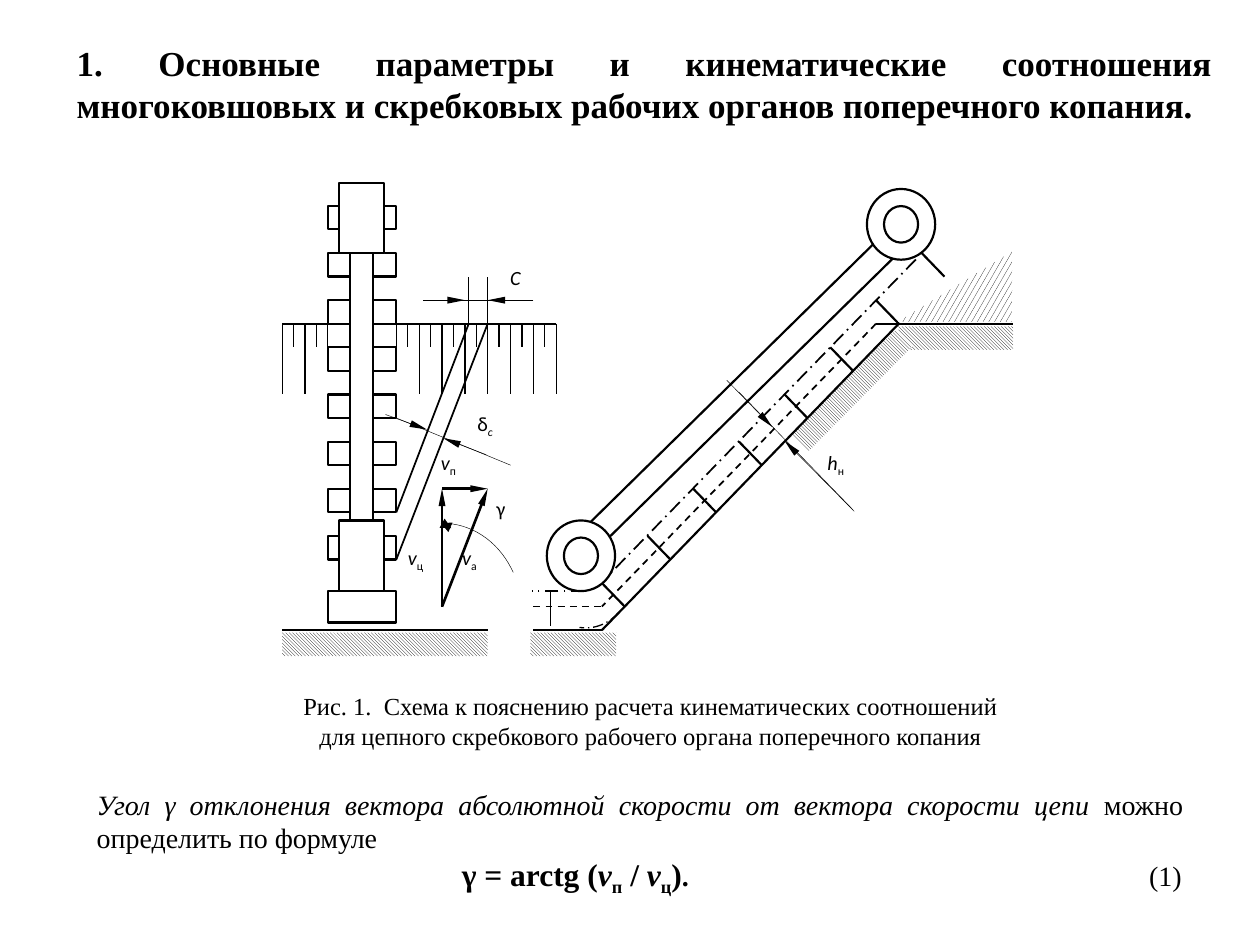
"""Builds the slide on the kinematics of a cross-digging scraper chain."""
from lxml.etree import SubElement
from pptx import Presentation
from pptx.dml.color import RGBColor
from pptx.enum.dml import MSO_LINE, MSO_PATTERN
from pptx.enum.shapes import MSO_CONNECTOR, MSO_SHAPE
from pptx.enum.text import MSO_ANCHOR, MSO_AUTO_SIZE, PP_ALIGN
from pptx.oxml.ns import qn
from pptx.util import Pt

BLACK = RGBColor(0, 0, 0)
WHITE = RGBColor(255, 255, 255)
SERIF, SANS = "Times New Roman", "Calibri"
X0, Y0, DX, DY = 161.25, 185, 13.05, 13.47
DASH, DASH_DOT = MSO_LINE.DASH, MSO_LINE.LONG_DASH_DOT
HATCH, CONFETTI = MSO_PATTERN.LIGHT_DOWNWARD_DIAGONAL, MSO_PATTERN.LARGE_CONFETTI

prs = Presentation()
prs.slide_width, prs.slide_height = Pt(720), Pt(540)
s = prs.slides.add_slide(prs.slide_layouts[5])


def add_line(c1, r1, c2, r2, width, dash=None, arrow=False):
    """Draws a line between two points of the drawing grid."""
    cn = s.shapes.add_connector(MSO_CONNECTOR.STRAIGHT, Pt(X0 + DX * c1), Pt(Y0 + DY * r1),
                                Pt(X0 + DX * c2), Pt(Y0 + DY * r2))
    cn.line.color.rgb = BLACK
    cn.line.width = Pt(width)
    if dash:
        cn.line.dash_style = dash
    if arrow:
        SubElement(cn.line._get_or_add_ln(), qn("a:tailEnd"), type="triangle", w="sm", len="lg")
    SubElement(cn._element.spPr, qn("a:effectLst"))


def add_runs(p, runs, font, size, bold=False):
    """Adds runs given as text and style, where i is italic and s is subscript."""
    for text, style in runs:
        r = p.add_run()
        r.text = text
        r.font.name, r.font.size = font, Pt(size)
        r.font.color.rgb = BLACK
        r.font.bold, r.font.italic = bold, "i" in style
        if "s" in style:
            r._r.get_or_add_rPr().set("baseline", "-25000")


title = s.shapes.title
title.left, title.top, title.width, title.height = Pt(40.3), Pt(385.2), Pt(663), Pt(53.3)
tf = title.text_frame
tf.text = ("Рис. 1.  Схема к пояснению расчета кинематических соотношений\v"
           "для цепного скребкового рабочего органа поперечного копания")
tf.auto_size = MSO_AUTO_SIZE.NONE
tf.vertical_anchor = MSO_ANCHOR.MIDDLE
p = tf.paragraphs[0]
p.alignment = PP_ALIGN.CENTER
for r in p.runs:
    r.font.name, r.font.size = SERIF, Pt(14)
    r.font.color.rgb = BLACK

tf = s.shapes.add_textbox(Pt(36.7), Pt(20.2), Pt(663), Pt(80)).text_frame
tf.word_wrap = True
tf.paragraphs[0].alignment = PP_ALIGN.JUSTIFY
add_runs(tf.paragraphs[0], [("1. Основные параметры и кинематические соотношения многоковшовых "
                             "и скребковых рабочих органов поперечного копания.", "")],
         SERIF, 20, True)

RECT, DONUT = MSO_SHAPE.RECTANGLE, MSO_SHAPE.DONUT
scrapers = [(RECT, X0 + 2 * DX, Y0 + DY * row, 3 * DX, DY, 0, WHITE) for row in range(-5, 10, 2)]
base = [(RECT, X0 + 2 * DX, 337.7, 3 * DX, 18, 0, WHITE)]
boom = [(RECT, 307.4, 215.3, 234.7, 13.7, 315.5, None)]
wheels = [(DONUT, x, y, 39, 40.4, 0, WHITE) for x, y in ((312.5, 297.4), (495.4, 108))]
shaft = [(RECT, 200.2, 131, 13, 201.6, 0, WHITE)]
drums = [(RECT, 193.7, y, 26, 40.4, 0, WHITE) for y in (104.4, 297.4)]
spoil = [(MSO_SHAPE.RIGHT_TRIANGLE, 525.6, 131, 40.3, 65.5, 270, CONFETTI)]
soil = [(RECT, x, y, w, DY, rot, HATCH) for x, y, w, rot in (
    (X0, 361.5, 117.4, 0), (303.1, 361.5, 49, 0), (513.4, 186.5, 65.5, 0),
    (444.2, 216.7, 85, 314.7))]

add_line(0, 0, 12, 0, 1.25)
add_line(27.75, -2.73, 13.74, 11.22, 1, DASH_DOT)
for k in range(8):
    add_line(28 - 2 * k, 2 * k - 3, 29 - 2 * k, 2 * k - 2, 1.25)

for kind, x, y, w, h, rot, fill in scrapers + base + boom + wheels + shaft + drums + spoil + soil:
    sp = s.shapes.add_shape(kind, Pt(x), Pt(y), Pt(w), Pt(h))
    sp.rotation = rot
    sp.shadow.inherit = False
    sp.line.color.rgb = BLACK
    sp.line.width = Pt(1.25)
    if fill is None:
        sp.fill.background()
    elif fill == WHITE:
        sp.fill.solid()
        sp.fill.fore_color.rgb = WHITE
    else:
        sp.fill.patterned()
        sp.fill.pattern = fill
        sp.fill.fore_color.rgb, sp.fill.back_color.rgb = BLACK, WHITE
        sp.line.fill.background()

for col in (0, 1, 6, 7, 8, 9, 10, 11, 12):
    add_line(col, 0, col, 3, 0.75)
for col in (0.5, 1.5, 2, 5, 5.5, 6.5, 7.5, 8.5, 9.5, 10.5, 11.5):
    add_line(col, 0, col, 1, 0.75)

for args in (
    (27, 0, 14, 13, 1.25), (26, 0, 32, 0, 1.25), (14, 13, 11, 13, 1.25), (0, 13, 9, 13, 1.25),
    (26, 0, 14, 12, 1, DASH), (11, 12, 14, 12, 1, DASH),
    (13.24, 11.33, 10.92, 11.33, 1, DASH_DOT), (11.75, 11.38, 11.75, 12.83, 1),
    (5, 10, 9, 0, 1), (5, 8, 8.17, 0, 1), (8.17, 0, 8.17, -2, 0.5), (9, 0, 9, -2, 0.5),
    (5, 4, 10, 6, 0.25), (7, -1, 11, -1, 0.25), (20, 2.9, 25, 7.9, 0.25),
):
    add_line(*args)

for c1, r1, c2, r2, width in (
    (8.94, 5.56, 7.06, 4.86, 0.25), (4.52, 3.85, 6.34, 4.49, 0.25),
    (6.18, -1, 8, -1, 0.25), (11, -1, 9, -1, 0.25),
    (19.47, 2.4, 21.46, 4.38, 0.25), (25.05, 7.96, 22, 4.97, 0.25),
    (7, 12, 7, 7, 1.5), (7, 7, 9, 7, 1.5), (7, 12, 9, 7, 1.5),
):
    add_line(c1, r1, c2, r2, width, arrow=True)

for cx, cy, rx, ry, start, end, width, dash, heads in (
    (334.8, 320.8, 29.5, 38, 57.6, 95.5, 0.75, DASH_DOT, ()),
    (252.7, 350, 45.4, 51, 270, 330.6, 0.25, None, ()),
    (252, 350, 18, 51, 270, 277, 0.25, None, ("a:headEnd", "a:tailEnd")),
):
    sp = s.shapes.add_shape(MSO_SHAPE.ARC, Pt(cx - rx), Pt(cy - ry), Pt(2 * rx), Pt(2 * ry))
    sp.adjustments[0], sp.adjustments[1] = start * 0.6, end * 0.6
    sp.shadow.inherit = False
    sp.fill.background()
    sp.line.color.rgb = BLACK
    sp.line.width = Pt(width)
    if dash:
        sp.line.dash_style = dash
    for head in heads:
        SubElement(sp.line._get_or_add_ln(), qn(head), type="triangle")

for x, y, w, runs in (
    (284.4, 146.2, 30, [("С", "i")]),
    (465.8, 251.3, 44, [("h", "i"), ("н", "s")]),
    (265.7, 229, 39, [("δ", ""), ("с", "is")]),
    (226, 306, 42.5, [("v", "i"), ("ц", "s")]),
    (257, 306, 39.6, [("v", "i"), ("а", "s")]),
    (244.8, 251.3, 39.6, [("v", "i"), ("п", "s")]),
    (276.5, 278, 26, [("γ", "")]),
):
    tf = s.shapes.add_textbox(Pt(x), Pt(y), Pt(w), Pt(40)).text_frame
    tf.word_wrap = True
    p = tf.paragraphs[0]
    p.line_spacing, p.space_after = 1.15, Pt(10)
    add_runs(p, runs, SANS, 11.5)

tf = s.shapes.add_textbox(Pt(48.2), Pt(446.4), Pt(635), Pt(67.7)).text_frame
tf.word_wrap = True
p = tf.paragraphs[0]
p.alignment = PP_ALIGN.JUSTIFY
add_runs(p, [("Угол γ отклонения вектора абсолютной скорости от вектора скорости цепи", "i"),
             (" можно определить по формуле", "")], SERIF, 16)
p = tf.add_paragraph()
p.alignment = PP_ALIGN.LEFT
tabs = SubElement(p._p.get_or_add_pPr(), qn("a:tabLst"))
for pos, algn in ((208.6, "l"), (620, "r")):
    SubElement(tabs, qn("a:tab"), pos=str(Pt(pos)), algn=algn)
add_runs(p, [("\tγ = аrctg (", ""), ("v", "i"), ("п", "s"), (" / ", ""),
             ("v", "i"), ("ц", "s"), (")", "")], SERIF, 18, True)
add_runs(p, [(".", "")], SERIF, 16, True)
add_runs(p, [("\t(1)", "")], SERIF, 16)

prs.save("out.pptx")
